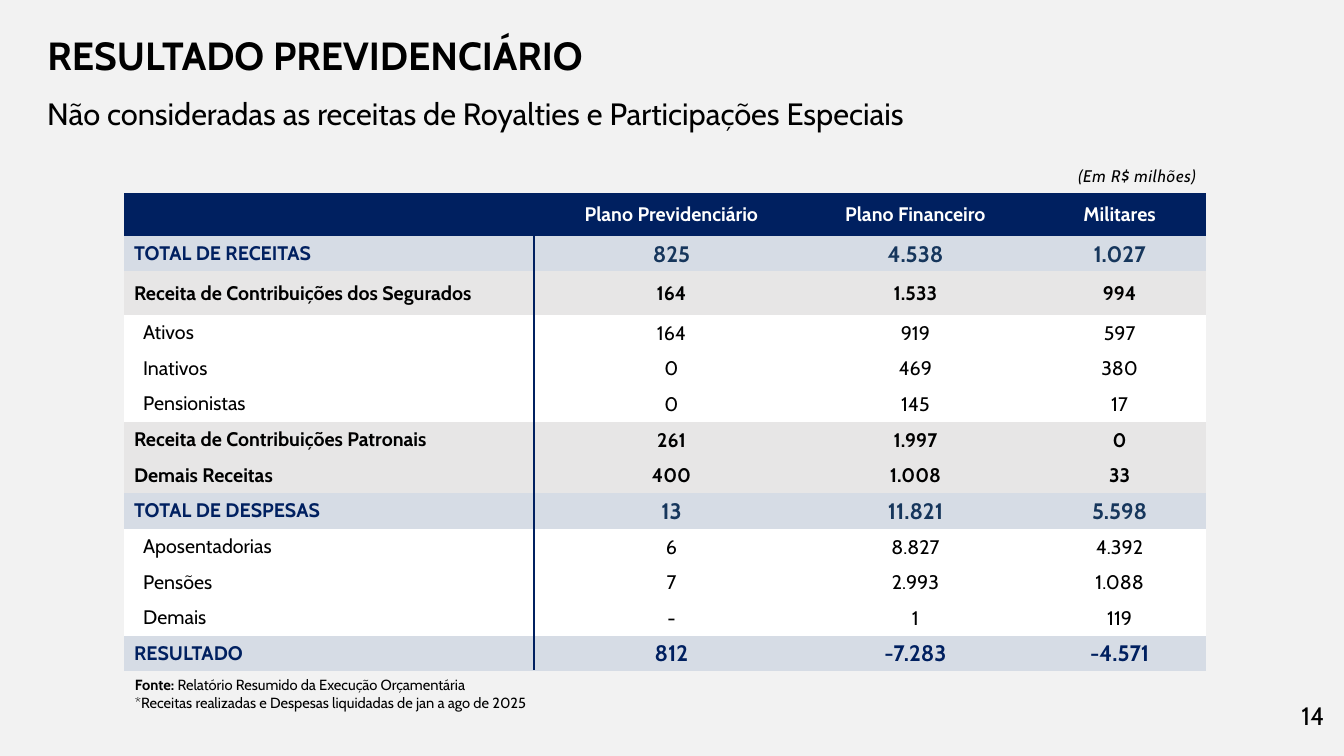
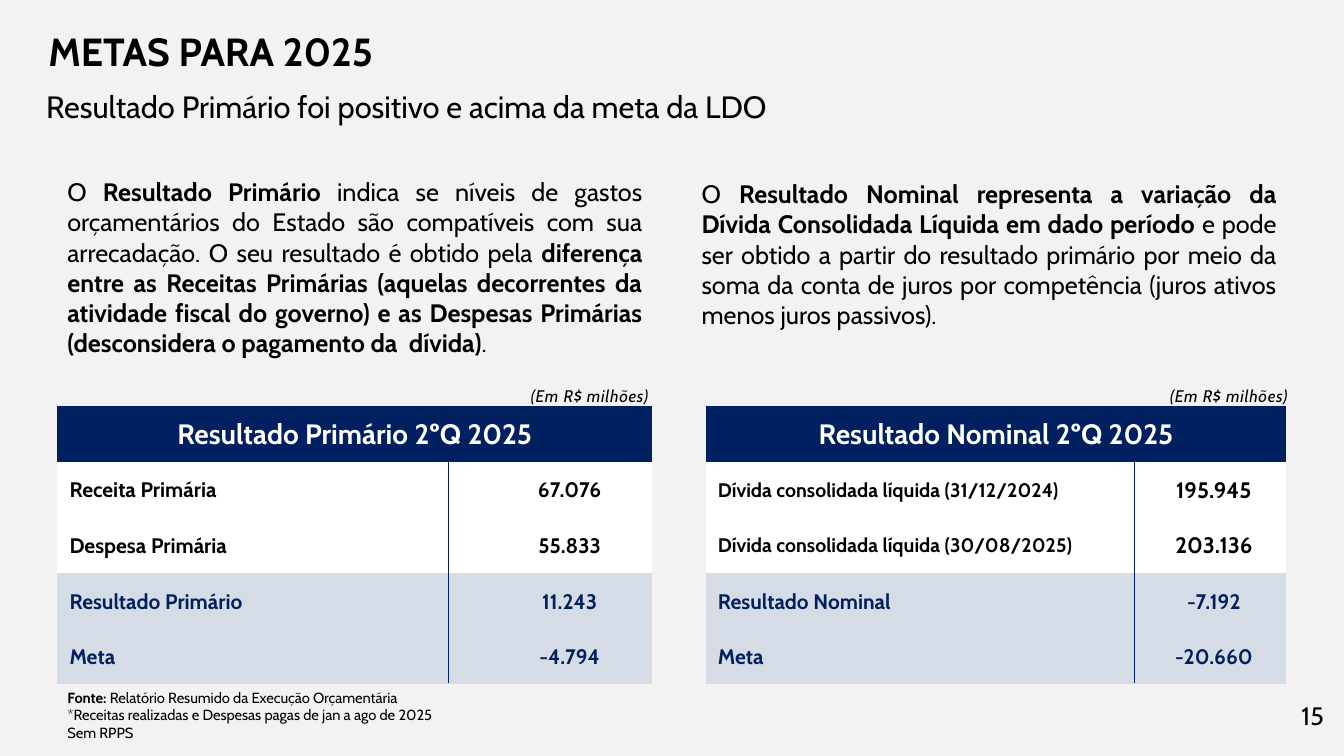
import pptx
import pptx.dml.color
import pptx.enum.text
import pptx.oxml.ns
import pptx.util
from lxml import etree

Inches = pptx.util.Inches
Pt = pptx.util.Pt
Align = pptx.enum.text.PP_ALIGN
Anchor = pptx.enum.text.MSO_ANCHOR

FONT = "Cabin"
COLORS = {
    "page": "F2F2F2",
    "text": "000000",
    "white": "FFFFFF",
    "navy": "002060",
    "steel": "16365C",
    "pale_blue": "D6DCE5",
    "gray": "E7E6E6",
}
NO_GRID_STYLE = "{2D5ABB26-0587-4C30-8999-92F81FD0307C}"
TITLE_ONLY = 5
VALUE_INSETS = (0.01, 0.01, 0.01, 0)
LABEL_INSETS = (0.1, 0.05, 0.1, 0.05)
INDENTED_INSETS = (0.19, 0.05, 0.1, 0.05)

# Row style: fill, label colour, value colour, bold, value size
PLAN_STYLES = {
    "total": ("pale_blue", "navy", "steel", True, 16),
    "result": ("pale_blue", "navy", "navy", True, 16),
    "group": ("gray", "text", "text", True, 14),
    "item": ("white", "text", "text", False, 14),
}
PLAN_HEADERS = ("", "Plano Previdenciário", "Plano Financeiro", "Militares")
PLAN_ROWS = [
    ("total", "TOTAL DE RECEITAS", "825", "4.538", "1.027"),
    ("group", "Receita de Contribuições dos Segurados", "164", "1.533", "994"),
    ("item", "Ativos", "164", "919", "597"),
    ("item", "Inativos", "0", "469", "380"),
    ("item", "Pensionistas", "0", "145", "17"),
    ("group", "Receita de Contribuições Patronais", "261", "1.997", "0"),
    ("group", "Demais Receitas", "400", "1.008", "33"),
    ("total", "TOTAL DE DESPESAS", "13", "11.821", "5.598"),
    ("item", "Aposentadorias", "6", "8.827", "4.392"),
    ("item", "Pensões", "7", "2.993", "1.088"),
    ("item", "Demais", "-", "1", "119"),
    ("result", "RESULTADO", "812", "-7.283", "-4.571"),
]


def rgb(name):
    return pptx.dml.color.RGBColor.from_string(COLORS[name])


def format_para(para, size, color="text", bold=False, italic=False,
                align=Align.LEFT, spacing=None):
    para.alignment = align
    if spacing:
        para.line_spacing = spacing
    font = para.font
    font.name, font.size = FONT, Pt(size)
    font.bold, font.italic = bold, italic
    font.color.rgb = rgb(color)


def add_text(page, box, lines, size, anchor=Anchor.TOP, wrap=True, **style):
    """Write one paragraph per line; text between ** marks is bold."""
    frame = page.shapes.add_textbox(*map(Inches, box)).text_frame
    frame.word_wrap = wrap
    frame.vertical_anchor = anchor
    for index, line in enumerate(lines):
        para = frame.add_paragraph() if index else frame.paragraphs[0]
        for part, text in enumerate(line.split("**")):
            if text:
                span = para.add_run()
                span.text = text
                if part % 2:
                    span.font.bold = True
        format_para(para, size, **style)
    return frame


def add_page(deck, number, title, title_at, subtitle, subtitle_at):
    page = deck.slides.add_slide(deck.slide_layouts[TITLE_ONLY])
    page.background.fill.solid()
    page.background.fill.fore_color.rgb = rgb("page")

    heading = page.shapes.title
    heading.left, heading.top = map(Inches, title_at)
    heading.width, heading.height = Inches(7.85), Inches(0.79)
    frame = heading.text_frame
    frame.text = title
    frame.vertical_anchor = Anchor.MIDDLE
    format_para(frame.paragraphs[0], 28, bold=True, spacing=0.9)

    add_text(page, (*subtitle_at, 12.6, 0.59), [subtitle], 22,
             anchor=Anchor.MIDDLE, spacing=1.2)
    add_text(page, (12.81, 6.9, 0.48, 0.4), [str(number)], 18, wrap=False)
    return page


def add_unit(page, right, top):
    frame = add_text(page, (right - 2.09, top, 2.09, 0.42), ["(Em R$ milhões)"],
                     12, italic=True, align=Align.RIGHT, spacing=1.2)
    frame.paragraphs[0].runs[0].font._element.set("spc", "50")


def add_rule(page, x, top, bottom, width):
    rule = page.shapes.add_connector(
        pptx.enum.shapes.MSO_CONNECTOR.STRAIGHT,
        Inches(x), Inches(top), Inches(x), Inches(bottom))
    rule.line.color.rgb = rgb("navy")
    rule.line.width = Pt(width)
    etree.SubElement(rule._element.spPr, pptx.oxml.ns.qn("a:effectLst"))


def add_grid(page, box, widths, heights):
    """Add a table with no style, borders or banding."""
    shape = page.shapes.add_table(len(heights), len(widths), *map(Inches, box))
    table = shape.table
    table.first_row = table.horz_banding = False
    table._tbl.tblPr.find(pptx.oxml.ns.qn("a:tableStyleId")).text = NO_GRID_STYLE
    for column, width in zip(table.columns, widths):
        column.width = Inches(width)
    for row, height in zip(table.rows, heights):
        row.height = Inches(height)
    return table


def fill_cell(cell, text, fill, insets=VALUE_INSETS, size=14, color="text",
              bold=True, align=Align.CENTER):
    cell.fill.solid()
    cell.fill.fore_color.rgb = rgb(fill)
    cell.vertical_anchor = Anchor.MIDDLE
    (cell.margin_left, cell.margin_top,
     cell.margin_right, cell.margin_bottom) = map(Inches, insets)
    cell.text = text
    format_para(cell.text_frame.paragraphs[0], size, color, bold, align=align)


def add_plan_table(page, box):
    left, top, width, height = box
    tall = 0.43
    low = (height - 2 * tall) / (len(PLAN_ROWS) - 1)
    heights = [tall, low, tall] + [low] * (len(PLAN_ROWS) - 2)
    table = add_grid(page, box, (4.18, 2.5, 2.34, 1.71), heights)
    for column, text in enumerate(PLAN_HEADERS):
        fill_cell(table.cell(0, column), text, "navy", LABEL_INSETS, color="white")
    for row, (kind, label, *values) in enumerate(PLAN_ROWS, 1):
        fill, label_color, value_color, bold, size = PLAN_STYLES[kind]
        insets = INDENTED_INSETS if kind == "item" else LABEL_INSETS
        fill_cell(table.cell(row, 0), label, fill, insets, 14, label_color,
                  bold, Align.LEFT)
        for column, value in enumerate(values, 1):
            fill_cell(table.cell(row, column), value, fill, size=size,
                      color=value_color, bold=bold)
    add_rule(page, left + 4.07, top + 0.33, top + height - 0.01, 1.5)
    add_unit(page, left + width, top - 0.35)


def add_goal_table(page, box, value_width, rule_offset, unit_offset, title, rows,
                   top_sizes):
    """Two plain rows over two highlighted ones; top_sizes are label, value."""
    left, top, width, height = box
    row_height = height / 5
    table = add_grid(page, box, (width - value_width, value_width),
                     [row_height] * 5)
    table.cell(0, 0).merge(table.cell(0, 1))
    fill_cell(table.cell(0, 0), title, "navy", size=20, color="white")
    for row, (label, value) in enumerate(rows, 1):
        plain = row <= 2
        fill, color = ("white", "text") if plain else ("pale_blue", "navy")
        label_size, value_size = top_sizes if plain else (15, 15)
        fill_cell(table.cell(row, 0), label, fill, (0.12, 0.01, 0.01, 0),
                  label_size, color, align=Align.LEFT)
        fill_cell(table.cell(row, 1), value, fill, size=value_size, color=color)
    add_rule(page, left + rule_offset, top + row_height, top + height - 0.01, 0.5)
    add_unit(page, left + width + unit_offset, top - 0.29)


def add_source(page, box, *remarks):
    add_text(page, box, ["**Fonte: **Relatório Resumido da Execução Orçamentária",
                         *remarks], 10.5)


def build_pension_page(deck):
    page = add_page(
        deck, 14, "RESULTADO PREVIDENCIÁRIO", (0.37, 0.18),
        "Não consideradas as receitas de Royalties e Participações Especiais",
        (0.37, 0.79))
    add_plan_table(page, (1.23, 1.91, 10.73, 4.75))
    add_source(page, (1.24, 6.66, 8.02, 0.45),
               "*Receitas realizadas e Despesas liquidadas de jan a ago de 2025")


def build_goals_page(deck):
    page = add_page(deck, 15, "METAS PARA 2025", (0.38, 0.14),
                    "Resultado Primário foi positivo e acima da meta da LDO",
                    (0.36, 0.72))
    explanations = [
        ((0.57, 1.7, 5.9, 2.22),
         "O **Resultado Primário **indica se níveis de gastos orçamentários do "
         "Estado são compatíveis com sua arrecadação. O seu resultado é obtido "
         "pela **diferença entre as Receitas Primárias (aquelas decorrentes da "
         "atividade fiscal do governo) e as Despesas Primárias (desconsidera o "
         "pagamento da  dívida)**."),
        ((6.86, 1.72, 5.9, 1.62),
         "O **Resultado Nominal representa a variação da Dívida Consolidada "
         "Líquida em dado período **e pode ser obtido a partir do resultado "
         "primário por meio da soma da conta de juros por competência (juros "
         "ativos menos juros passivos)."),
    ]
    for box, text in explanations:
        add_text(page, box, [text], 18, align=Align.JUSTIFY)

    add_goal_table(
        page, (0.57, 4.03, 5.9, 2.76), 1.64, 3.88, 0.06,
        "Resultado Primário 2ºQ 2025",
        [("Receita Primária", "67.076"), ("Despesa Primária", "55.833"),
         ("Resultado Primário", "11.243"), ("Meta", "-4.794")], (15, 15))
    add_goal_table(
        page, (7, 4.03, 5.76, 2.76), 1.44, 4.25, 0.11,
        "Resultado Nominal 2ºQ 2025",
        [("Dívida consolidada líquida (31/12/2024)", "195.945"),
         ("Dívida consolidada líquida (30/08/2025)", "203.136"),
         ("Resultado Nominal", "-7.192"), ("Meta", "-20.660")], (14, 16))
    add_source(page, (0.57, 6.78, 4.74, 0.63),
               "*Receitas realizadas e Despesas pagas de jan a ago de 2025",
               "Sem RPPS")


def main():
    deck = pptx.Presentation()
    deck.slide_width, deck.slide_height = Inches(13.33), Inches(7.5)
    build_pension_page(deck)
    build_goals_page(deck)
    deck.save("out.pptx")


if __name__ == "__main__":
    main()
